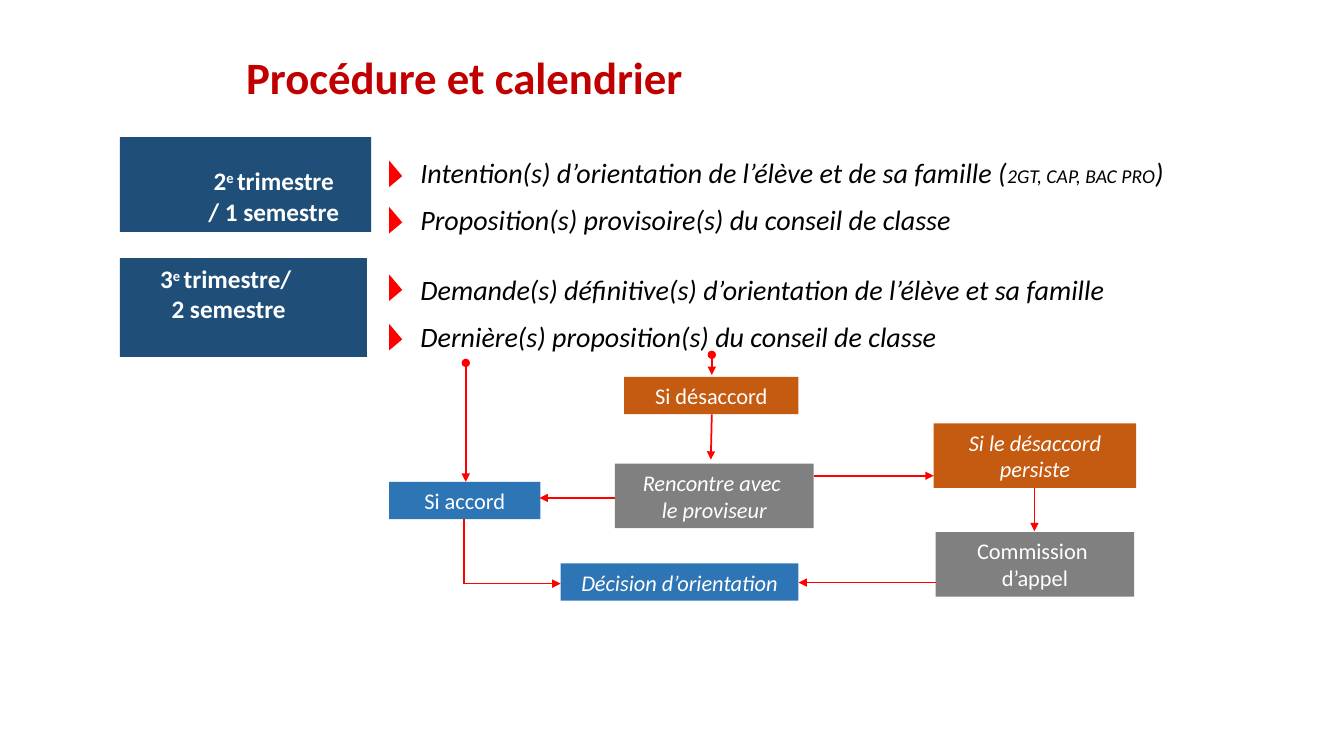
from lxml.etree import SubElement
from pptx import Presentation
from pptx.dml.color import RGBColor
from pptx.enum.shapes import MSO_CONNECTOR as Link, MSO_SHAPE as Form
from pptx.enum.text import MSO_ANCHOR as Anchor, MSO_AUTO_SIZE as Fit, PP_ALIGN as Align
from pptx.oxml.ns import qn
from pptx.util import Inches, Pt

NAVY, BLUE, ORANGE, GREY = "1F4E79", "2E75B6", "C55A11", "808080"
RED, WHITE, BLACK = "FF0000", "FFFFFF", "000000"

TITLE = "Procédure et calendrier"

# panel box, label box, label lines as (text, superscript) runs
TERMS = [
    ((1.19, 1.36, 2.49, 0.94), (1.19, 1.46, 3.05, 0.97),
     [[("2", False), ("e ", True), ("trimestre", False)], [("/ 1 semestre", False)]]),
    ((1.19, 2.56, 2.45, 0.98), (1.07, 2.43, 2.34, 0.97),
     [[("3", False), ("e ", True), ("trimestre/", False)], [(" 2 semestre", False)]]),
]

# top of the list, tops of its markers, items as (text, size) runs
STEPS = [
    (1.49, (1.64, 2.1),
     [[("Intention(s) d’orientation de l’élève et de sa famille (", 20),
       ("2GT, CAP, BAC PRO", 14), (")", 20)],
      [("Proposition(s) provisoire(s) du conseil de classe", 20)]]),
    (2.65, (2.77, 3.26),
     [[("Demande(s) définitive(s) d’orientation de l’élève et sa famille", 20)],
      [("Dernière(s) proposition(s) du conseil de classe", 20)]]),
]

# text, box, fill, italic
NODES = [
    ("Si accord", (3.86, 4.78, 1.5, 0.37), BLUE, False),
    ("Si désaccord", (6.19, 3.74, 1.73, 0.37), ORANGE, False),
    ("Décision d’orientation", (5.56, 5.59, 2.36, 0.37), BLUE, True),
    ("Rencontre avec \vle proviseur", (6.1, 4.6, 1.97, 0.64), GREY, True),
    ("Si le désaccord persiste", (9.26, 4.2, 2.01, 0.64), ORANGE, True),
    ("Commission \vd’appel", (9.28, 5.28, 1.97, 0.64), GREY, False),
]

# start, end, head, tail
ARROWS = [
    ((4.62, 3.6), (4.62, 4.78), "oval", "triangle"),
    ((7.06, 3.52), (7.06, 3.72), "oval", "triangle"),
    ((7.06, 4.11), (7.05, 4.56), None, "triangle"),
    ((6.1, 4.94), (5.35, 4.94), None, "triangle"),
    ((8.07, 4.72), (9.26, 4.72), None, "triangle"),
    ((10.26, 4.84), (10.26, 5.27), None, "triangle"),
    ((9.28, 5.78), (7.92, 5.78), None, "triangle"),
    ((4.6, 5.15), (4.6, 5.79), None, None),
    ((4.6, 5.79), (5.56, 5.79), None, "triangle"),
]


def paint(color, value):
    color.rgb = RGBColor.from_string(value)


def style(font, size, color, bold=False, italic=False):
    font.name, font.size = "Calibri", Pt(size)
    font.bold, font.italic = bold, italic
    paint(font.color, color)


def place(shape, box):
    shape.left, shape.top, shape.width, shape.height = map(Inches, box)


def draw(form, box, fill):
    shape = slide.shapes.add_shape(form, *map(Inches, box))
    shape.shadow.inherit = False
    shape.fill.solid()
    paint(shape.fill.fore_color, fill)
    shape.line.fill.background()
    return shape


def get_par(frame, i):
    return frame.paragraphs[0] if i == 0 else frame.add_paragraph()


def add_term(panel, box, lines):
    draw(Form.RECTANGLE, panel, NAVY)
    frame = slide.shapes.add_textbox(*map(Inches, box)).text_frame
    frame.word_wrap = False
    frame.vertical_anchor = Anchor.MIDDLE
    for i, line in enumerate(lines):
        par = get_par(frame, i)
        par.alignment = Align.CENTER
        style(par.font, 18, WHITE, bold=True)
        for text, raised in line:
            run = par.add_run()
            run.text = text
            style(run.font, 18, WHITE, bold=True)
            if raised:
                run.font._element.set("baseline", "30000")


def add_steps(holder, top, marks, items):
    place(holder, (4.07, top, 7.71, 0.91))
    frame = holder.text_frame
    frame.auto_size = Fit.NONE
    for i, item in enumerate(items):
        par = get_par(frame, i)
        par.space_before = Pt(9.5 * i)
        props = par._p.get_or_add_pPr()
        props.set("marL", "0")
        props.set("indent", "0")
        SubElement(props, qn("a:buNone"))
        for text, size in item:
            run = par.add_run()
            run.text = text
            style(run.font, size, BLACK, italic=True)
    for y in marks:
        draw(Form.RIGHT_TRIANGLE, (3.76, y, 0.2, 0.17), RED).rotation = 229.9


def add_node(text, box, fill, italic):
    frame = draw(Form.RECTANGLE, box, fill).text_frame
    frame.word_wrap = True
    frame.text = text
    par = frame.paragraphs[0]
    par.alignment = Align.CENTER
    style(par.font, 16, WHITE, italic=italic)


def add_arrow(start, end, head, tail):
    arrow = slide.shapes.add_connector(Link.STRAIGHT, *map(Inches, start + end))
    arrow.line.width = Pt(1.25)
    paint(arrow.line.color, RED)
    line = arrow.line._get_or_add_ln()
    for tag, kind in (("a:headEnd", head), ("a:tailEnd", tail)):
        if kind:
            SubElement(line, qn(tag), type=kind)
    SubElement(arrow._element.spPr, qn("a:effectLst"))


deck = Presentation()
deck.slide_width, deck.slide_height = Inches(13.33), Inches(7.5)
slide = deck.slides.add_slide(deck.slide_layouts.get_by_name("Two Content"))
title, *lists = slide.placeholders

place(title, (2.34, 0.44, 8.66, 0.64))
title.text_frame.text = TITLE
title.text_frame.auto_size = Fit.NONE
heading = title.text_frame.paragraphs[0]
heading.alignment = Align.LEFT
style(heading.font, 32, "C00000", bold=True)

for term in TERMS:
    add_term(*term)
for holder, step in zip(lists, STEPS):
    add_steps(holder, *step)
for node in NODES:
    add_node(*node)
for arrow in ARROWS:
    add_arrow(*arrow)

deck.save("out.pptx")
